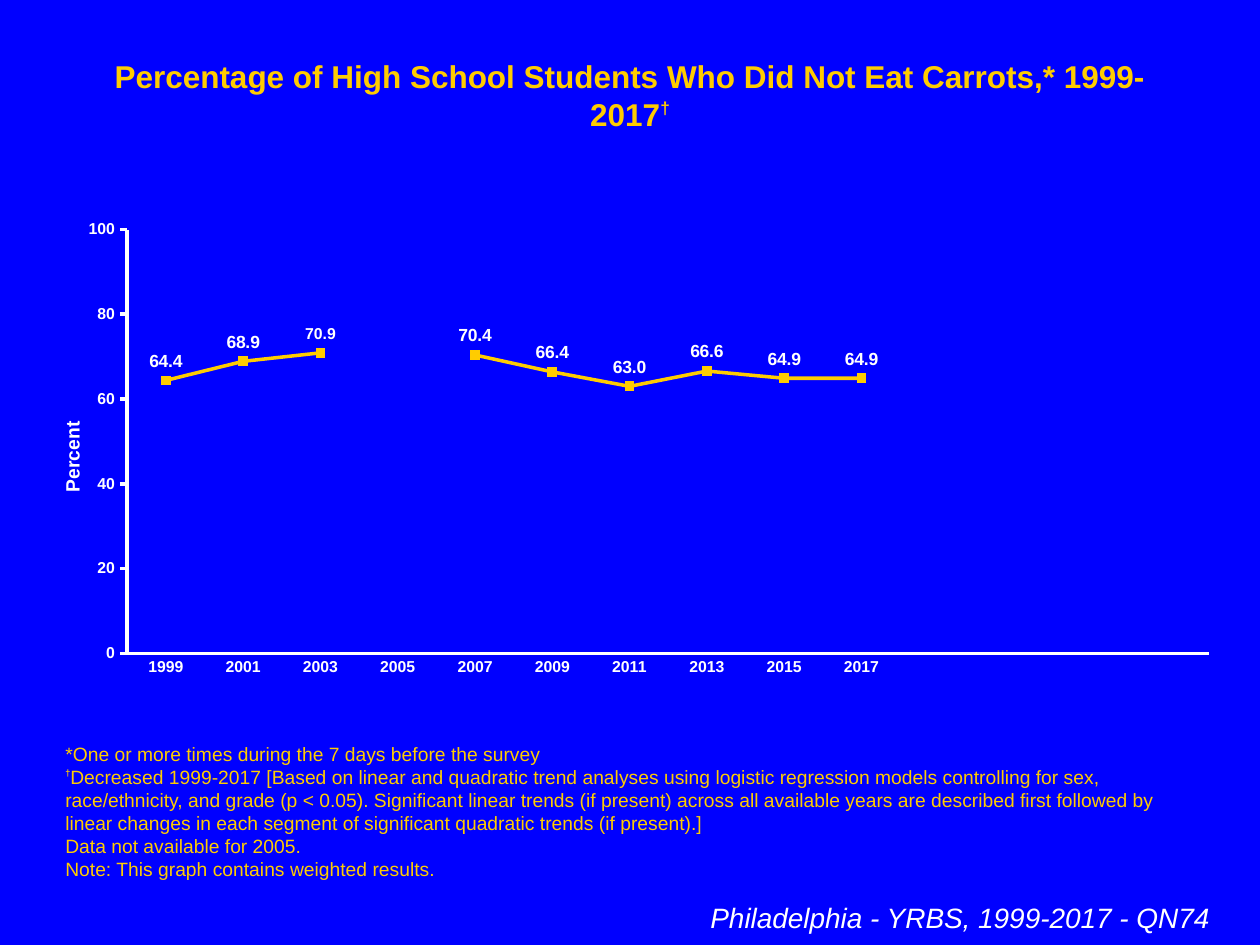
"""Build the slide on carrot consumption among high school students."""
from lxml.etree import SubElement
from pptx import Presentation
from pptx.chart.data import CategoryChartData
from pptx.dml.color import RGBColor
from pptx.enum.chart import XL_CHART_TYPE as CT, XL_LABEL_POSITION as LP
from pptx.enum.chart import XL_MARKER_STYLE as MS, XL_TICK_MARK as TM
from pptx.enum.text import MSO_ANCHOR as VA, MSO_AUTO_SIZE as AS, PP_ALIGN as AL
from pptx.oxml.ns import qn
from pptx.util import Inches, Pt

COLORS = {"back": "0000FF", "gold": "FFCC00", "white": "FFFFFF"}
RGB = {name: RGBColor.from_string(value) for name, value in COLORS.items()}

prs = Presentation()
prs.slide_width, prs.slide_height = Inches(10), Inches(7.5)
COL, ROW = prs.slide_width / 100, prs.slide_height / 75
s = prs.slides.add_slide(prs.slide_layouts[5])
s.background.fill.solid()
s.background.fill.fore_color.rgb = RGB["back"]


def fill_box(sp, grid, anchor, align, color, paragraphs):
    sp.left, sp.top, sp.width, sp.height = (
        int(n * unit) for n, unit in zip(grid, (COL, ROW, COL, ROW)))
    tf = sp.text_frame
    tf.word_wrap, tf.auto_size, tf.vertical_anchor = True, AS.SHAPE_TO_FIT_TEXT, anchor
    for i, runs in enumerate(paragraphs):
        p = tf.add_paragraph() if i else tf.paragraphs[0]
        p.alignment = align
        for text, size, bold, italic, raised in runs:
            r = p.add_run()
            r.text = text
            r.font.name, r.font.size = "Arial", Pt(size)
            r.font.bold, r.font.italic = bold, italic
            r.font.color.rgb = RGB[color]
            if raised:
                r.font._element.set("baseline", str(raised * 1000))


def place(parent, index, **shares):
    for old in parent.findall(qn("c:layout")):
        parent.remove(old)
    layout = SubElement(parent, qn("c:layout"))
    manual = SubElement(layout, qn("c:manualLayout"))
    for tag, value in shares.items():
        SubElement(manual, qn(f"c:{tag}")).set("val", str(value))
    parent.insert(index, layout)


fill_box(s.shapes.title, (5, 4, 90, 4), VA.TOP, AL.CENTER, "gold", [[
    ("Percentage of High School Students Who Did Not Eat Carrots,* 1999-2017",
     18, True, False, 0),
    ("†", 17, True, False, 40)]])

data = CategoryChartData(number_format="0.0")
data.categories = [str(year) for year in range(1999, 2018, 2)] + [""] * 4
data.add_series("Series 1", [64.4, 68.9, 70.9, None, 70.4, 66.4, 63.0, 66.6,
                             64.9, 64.9] + [None] * 4)
chart = s.shapes.add_chart(CT.LINE_MARKERS, int(2.5 * COL), int(16.7 * ROW),
                           int(95 * COL), int(40 * ROW), data).chart
chart.has_legend = chart.has_title = False
chart.font.name, chart.font.size = "Arial", Pt(18)
chart.font.color.rgb = RGB["white"]
place(chart._chartSpace.chart.plotArea, 0, layoutTarget="inner", xMode="edge",
      yMode="edge", x=0.08, y=0.038, w=0.904, h=0.841)

value_axis = chart.value_axis
for axis, tick in ((chart.category_axis, TM.NONE), (value_axis, TM.OUTSIDE)):
    axis.has_major_gridlines = False
    axis.major_tick_mark, axis.minor_tick_mark = tick, TM.NONE
    axis.format.line.color.rgb = RGB["white"]
    axis.format.line.width = Pt(2)
    font = axis.tick_labels.font
    font.name, font.size, font.bold = "Arial", Pt(9), True
    font.color.rgb = RGB["white"]
value_axis.minimum_scale, value_axis.maximum_scale = 0, 100
value_axis.major_unit = 20
value_axis.tick_labels.number_format = "#,##0"
value_axis.tick_labels.number_format_is_linked = False

title = value_axis.axis_title
r = title.text_frame.paragraphs[0].add_run()
r.text = "Percent"
r.font.name, r.font.size, r.font.bold = "Arial", Pt(11), True
r.font.color.rgb = RGB["white"]
place(title._element, 1, xMode="edge", yMode="edge", x=0.02, y=0.41)

series = chart.plots[0].series[0]
series.smooth = False
series.format.line.color.rgb = RGB["gold"]
series.format.line.width = Pt(2)
marker = series.marker
marker.style, marker.size = MS.SQUARE, 5
marker.format.fill.solid()
marker.format.fill.fore_color.rgb = RGB["gold"]
marker.format.line.color.rgb = RGB["gold"]
labels = series.data_labels
labels.show_value = True
labels.number_format, labels.number_format_is_linked = "#,##0.0", False
for label, size in ((labels, 10), (series.points[2].data_label, 9)):
    label.position = LP.ABOVE
    label.font.name, label.font.size, label.font.bold = "Arial", Pt(size), True
    label.font.color.rgb = RGB["white"]

notes = [
    [("*One or more times during the 7 days before the survey", 11, False, False, 0)],
    [("†", 9, True, False, 50),
     ("Decreased 1999-2017 [Based on linear and quadratic trend analyses using "
      "logistic regression models controlling for sex, race/ethnicity, and grade "
      "(p < 0.05). Significant linear trends (if present) across all available "
      "years are described first followed by linear changes in each segment of "
      "significant quadratic trends (if present).]", 11, False, False, 0)],
    [("Data not available for 2005.", 11, False, False, 0)],
    [("Note: This graph contains weighted results.", 11, False, False, 0)],
]
fill_box(s.shapes.add_textbox(0, 0, 0, 0), (4.2, 67.5, 91.7, 2.9), VA.BOTTOM,
         AL.LEFT, "gold", notes)
fill_box(s.shapes.add_textbox(0, 0, 0, 0), (4.2, 71, 92.8, 3.7), VA.TOP,
         AL.RIGHT, "white",
         [[("Philadelphia - YRBS, 1999-2017 - QN74", 16, False, True, 0)]])

prs.save("out.pptx")
